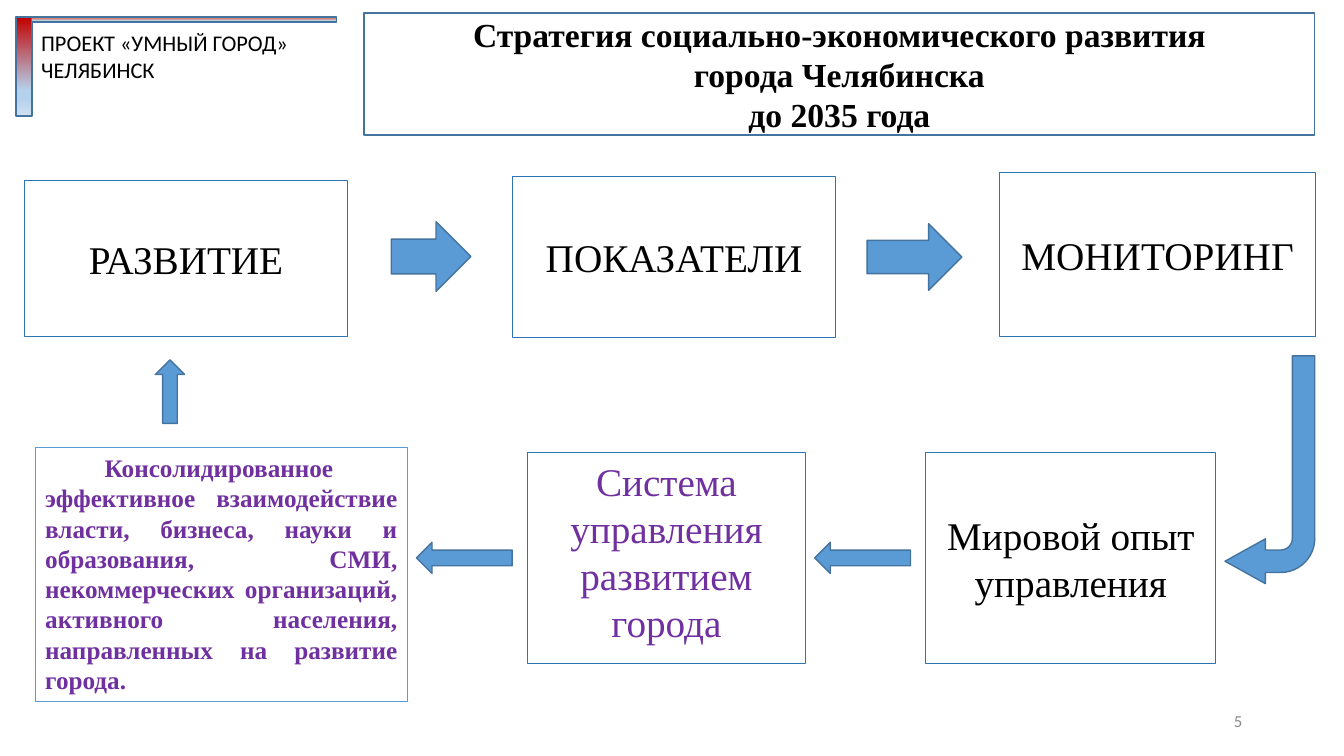
from lxml.etree import SubElement
from pptx import Presentation
from pptx.dml.color import RGBColor
from pptx.enum.shapes import MSO_SHAPE
from pptx.enum.text import MSO_ANCHOR, MSO_AUTO_SIZE, PP_ALIGN
from pptx.oxml.ns import qn
from pptx.util import Inches, Pt

BLACK = RGBColor(0x00, 0x00, 0x00)
GRAY = RGBColor(0x89, 0x89, 0x89)
PURPLE = RGBColor(0x70, 0x30, 0xA0)
BLUE = RGBColor(0x5B, 0x9B, 0xD5)
BOX_BLUE = RGBColor(0x2E, 0x75, 0xB6)
DARK_BLUE = RGBColor(0x43, 0x73, 0x9E)
RED = RGBColor(0xC0, 0x00, 0x00)
ORANGE = RGBColor(0xE9, 0x52, 0x25)
PALE_BLUE = RGBColor(0xB5, 0xD2, 0xEC)
LIGHT_BLUE = RGBColor(0xCE, 0xE1, 0xF2)
SERIF, SANS = "Times New Roman", "Calibri"

# Content: places are left, top, width, height in inches
TITLE = ["Стратегия социально-экономического развития", "города Челябинска", "до 2035 года"]
TITLE_PLACE = (3.61, 0.13, 9.43, 1.21)
PROJECT = ["ПРОЕКТ «УМНЫЙ ГОРОД»", "ЧЕЛЯБИНСК"]
PROJECT_PLACE = (0.31, 0.24, 3.29, 0.64)
PAGE_NUMBER = ["5"]
PAGE_PLACE = (9.42, 6.95, 3, 0.4)
COOPERATION = ["Консолидированное эффективное взаимодействие власти, бизнеса, науки и "
               "образования, СМИ, некоммерческих организаций, активного населения, "
               "направленных на развитие города."]
COOPERATION_PLACE = (0.35, 4.44, 3.69, 2.52)

# Text, place, colour, anchor, space before
STEPS = [
    ("РАЗВИТИЕ", (0.24, 1.79, 3.21, 1.55), BLACK, MSO_ANCHOR.MIDDLE, 14),
    ("ПОКАЗАТЕЛИ", (5.08, 1.75, 3.21, 1.6), BLACK, MSO_ANCHOR.MIDDLE, 14),
    ("МОНИТОРИНГ", (9.91, 1.71, 3.14, 1.63), BLACK, MSO_ANCHOR.MIDDLE, 24),
    ("Мировой опыт управления", (9.18, 4.49, 2.88, 2.09), BLACK, MSO_ANCHOR.MIDDLE, 14),
    ("Система управления развитием города", (5.23, 4.49, 2.76, 2.09), PURPLE, MSO_ANCHOR.TOP, 14),
]
# Preset, place, rotation, adjustments
ARROWS = [
    (MSO_SHAPE.RIGHT_ARROW, (3.88, 2.2, 0.79, 0.69), 0, ()),
    (MSO_SHAPE.RIGHT_ARROW, (8.6, 2.22, 0.94, 0.66), 0, ()),
    (MSO_SHAPE.BENT_ARROW, (12.15, 3.53, 0.89, 2.26), 180, (0.25, 0.25, 0.45, 0.38)),
    (MSO_SHAPE.DOWN_ARROW, (8.4, 5.06, 0.31, 0.95), 90, ()),
    (MSO_SHAPE.DOWN_ARROW, (4.45, 5.06, 0.31, 0.95), 90, ()),
    (MSO_SHAPE.RIGHT_ARROW, (1.37, 3.74, 0.63, 0.29), 270, ()),
]
# Place, starting colour
GRADIENT_BARS = [((0.16, 0.17, 0.16, 0.98), RED), ((0.31, 0.17, 3.03, 0.05), ORANGE)]


def add_shape(preset, place, line_color, line_width, fill_color=None):
    shape = slide.shapes.add_shape(preset, *map(Inches, place))
    shape.shadow.inherit = False
    set_outline(shape, line_color, line_width)
    if fill_color is None:
        shape.fill.background()
    else:
        shape.fill.solid()
        shape.fill.fore_color.rgb = fill_color
    return shape


def set_outline(shape, color, width):
    shape.line.color.rgb = color
    shape.line.width = Pt(width)


def set_text(shape, lines, font, align=PP_ALIGN.CENTER, anchor=MSO_ANCHOR.MIDDLE,
             side_margin=0.1, before=0, after=0):
    frame = shape.text_frame
    frame.text = "\n".join(lines)
    frame_format = {
        "word_wrap": True, "auto_size": MSO_AUTO_SIZE.NONE, "vertical_anchor": anchor,
        "margin_left": Inches(side_margin), "margin_right": Inches(side_margin),
        "margin_top": Inches(0.05), "margin_bottom": Inches(0.05),
    }
    for name, value in frame_format.items():
        setattr(frame, name, value)
    for paragraph in frame.paragraphs:
        paragraph.alignment = align
        paragraph.space_before, paragraph.space_after = Pt(before), Pt(after)
        for name, value in font.items():
            setattr(paragraph.font, name, value)
            for run in paragraph.runs:
                if name != "color":
                    setattr(run.font, name, value)


def make_font(name, size, bold=False):
    return {"name": name, "size": Pt(size), "bold": bold}


def set_color(shape, color):
    for paragraph in shape.text_frame.paragraphs:
        for run in paragraph.runs:
            run.font.color.rgb = color


def set_gradient(shape, start_color):
    shape.fill.gradient()
    gradient = shape.fill._xPr.find(qn("a:gradFill"))
    for child in list(gradient):
        gradient.remove(child)
    stops = SubElement(gradient, qn("a:gsLst"))
    for percent, color in [(0, start_color), (74, PALE_BLUE), (83, PALE_BLUE), (100, LIGHT_BLUE)]:
        stop = SubElement(stops, qn("a:gs"), pos=str(percent * 1000))
        SubElement(stop, qn("a:srgbClr"), val=str(color))
    SubElement(gradient, qn("a:lin"), ang="5400000", scaled="0")


presentation = Presentation()
presentation.slide_width, presentation.slide_height = Inches(13.33), Inches(7.5)
slide = presentation.slides.add_slide(presentation.slide_layouts[5])

# Title
title = slide.shapes.title
title.left, title.top, title.width, title.height = map(Inches, TITLE_PLACE)
set_outline(title, DARK_BLUE, 1)
set_text(title, TITLE, make_font(SERIF, 24, True))
set_color(title, BLACK)

# Project mark
for place, start_color in GRADIENT_BARS:
    bar = add_shape(MSO_SHAPE.RECTANGLE, place, DARK_BLUE, 1)
    set_gradient(bar, start_color)

# Project name and page number
for lines, place, size, color, align, anchor in [
    (PROJECT, PROJECT_PLACE, 16, BLACK, PP_ALIGN.LEFT, MSO_ANCHOR.TOP),
    (PAGE_NUMBER, PAGE_PLACE, 12, GRAY, PP_ALIGN.RIGHT, MSO_ANCHOR.MIDDLE),
]:
    label = slide.shapes.add_textbox(*map(Inches, place))
    set_text(label, lines, make_font(SANS, size), align, anchor)
    set_color(label, color)

# Steps of the cycle
for text, place, color, anchor, before in STEPS:
    step = add_shape(MSO_SHAPE.RECTANGLE, place, BOX_BLUE, 0.75)
    set_text(step, [text], make_font(SERIF, 28), anchor=anchor, side_margin=0.04,
             before=before, after=6)
    set_color(step, color)

# Cooperation box with a first-line indent
cooperation = add_shape(MSO_SHAPE.RECTANGLE, COOPERATION_PLACE, BLUE, 0.75)
set_text(cooperation, COOPERATION, make_font(SERIF, 18, True), PP_ALIGN.JUSTIFY, MSO_ANCHOR.TOP)
set_color(cooperation, PURPLE)
properties = cooperation.text_frame.paragraphs[0]._p.get_or_add_pPr()
properties.set("marL", "0")
properties.set("indent", str(Inches(0.59)))

# Arrows
for preset, place, rotation, adjustments in ARROWS:
    arrow = add_shape(preset, place, DARK_BLUE, 1, BLUE)
    arrow.rotation = rotation
    for index, value in enumerate(adjustments):
        arrow.adjustments[index] = value

presentation.save("out.pptx")
